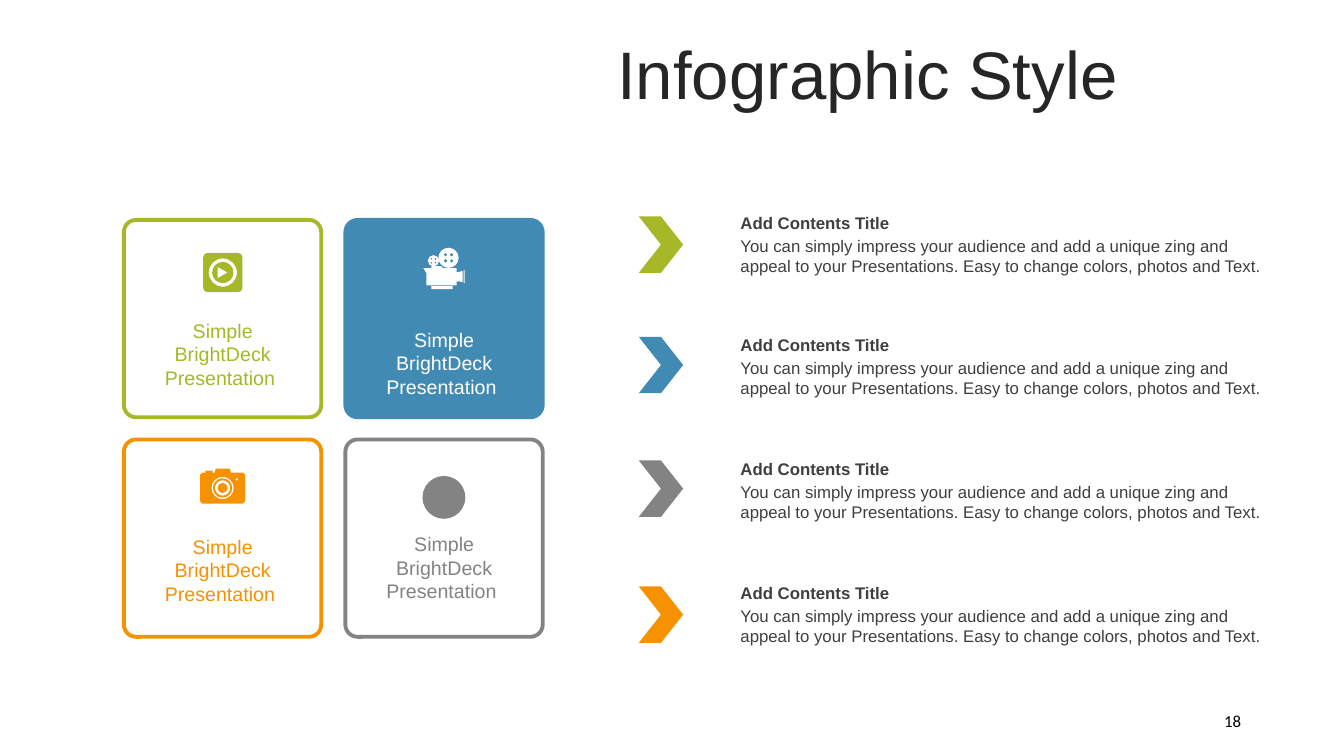
import itertools
import lxml.etree
import pptx
import pptx.dml.color
import pptx.enum.shapes
import pptx.enum.text
import pptx.oxml.ns
import pptx.util

Pt = pptx.util.Pt
KIND = pptx.enum.shapes.MSO_SHAPE
ALIGN = pptx.enum.text.PP_ALIGN
ANCHOR = pptx.enum.text.MSO_ANCHOR
FIT = pptx.enum.text.MSO_AUTO_SIZE

GREEN, BLUE, ORANGE, GRAY = "A6B727", "418AB3", "F69200", "838383"
WHITE, DARK = "FFFFFF", "3F3F3F"


def hue(code):
    return pptx.dml.color.RGBColor.from_string(code)


def ring(left, top, size, radius):
    near, far, pull = radius, size - radius, radius * 0.55
    corners = [(far, far, 1, 0), (near, far, 0, 1), (near, near, -1, 0), (far, near, 0, -1)]
    points = []
    for x, y, dx, dy in corners:
        x, y = left + x, top + y
        if not points or near < far:
            points.append((x + dx * radius, y + dy * radius, False))
        points += [(x + dx * radius - dy * pull, y + dy * radius + dx * pull, True),
                   (x + dx * pull - dy * radius, y + dy * pull + dx * radius, True),
                   (x - dy * radius, y + dx * radius, True)]
    return points


deck = pptx.Presentation()
deck.slide_width, deck.slide_height = Pt(960), Pt(540)
slide = deck.slides.add_slide(deck.slide_layouts[5])
texts = []

title = slide.shapes.title
title.left, title.top, title.width, title.height = Pt(302.6), Pt(27), Pt(634.3), Pt(56.9)
texts.append((title, "Infographic Style",
              {"vertical_anchor": ANCHOR.MIDDLE, "auto_size": FIT.NONE},
              {"alignment": ALIGN.CENTER, "line_spacing": 0.9},
              {"size": Pt(48), "name": "Arial"}, "262626"))

cards = [
    (0, 0, WHITE, GREEN, GREEN, 223.9),
    (1, 0, BLUE, BLUE, WHITE, 230.4),
    (0, 1, WHITE, ORANGE, ORANGE, 378.2),
    (1, 1, WHITE, GRAY, GRAY, 376.6),
]
rows = [
    (GREEN, 154.6, 148.3),
    (BLUE, 240.6, 235.4),
    (GRAY, 328.9, 324),
    (ORANGE, 418.9, 412.6),
]

forms = [(KIND.ROUNDED_RECTANGLE, 88.5 + 158.2 * col, 157.1 + 156.8 * row, 141, 141, 0.062, fill, edge)
         for col, row, fill, edge, ink, top in cards]
forms += [(KIND.CHEVRON, 456.3, top, 31.7, 40.3, 0.5, fill, None) for fill, top, head in rows]
forms.append((KIND.OVAL, 301.8, 340, 30.6, 30.6, None, GRAY, None))
for kind, left, top, width, height, bend, fill, edge in forms:
    shape = slide.shapes.add_shape(kind, Pt(left), Pt(top), Pt(width), Pt(height))
    shape.shadow.inherit = False
    shape.fill.solid()
    shape.fill.fore_color.rgb = hue(fill)
    if bend:
        shape.adjustments[0] = bend
    if edge:
        shape.line.color.rgb = hue(edge)
        shape.line.width = Pt(2.75)
    else:
        shape.line.fill.background()

play = [
    ring(145.2, 180.7, 28, 3),
    ring(149.1, 184.6, 20.2, 10.1),
    ring(151.6, 187.1, 15.2, 7.6),
    [(155.5, 190.7), (155.5, 198.7), (162.7, 194.7)],
]
lens = [ring(159 - size, 348.6 - size, size * 2, size) for size in (8, 6.9, 5.5, 3.6)]
photo = [
    [(143, 339), (144.4, 337.7), (146.7, 337.7), (146.7, 336.2), (151.9, 336.2),
     (151.9, 337.7), (153.4, 337.7), (154.1, 334.8), (164.2, 334.8), (164.9, 337.7),
     (173.5, 337.7), (175, 339), (175, 358.2), (173.5, 359.7), (144.4, 359.7), (143, 358.2)],
    ring(168.1, 341.3, 2.2, 1.1),
] + lens
film = [
    [(302.4, 191.5), (308.2, 191.5), (308.2, 190.2), (315, 190.2), (316.5, 191.5),
     (326.2, 191.5), (326.2, 194.4), (327.6, 194.4), (330.5, 193.5), (330.5, 201.5),
     (327.6, 201), (326.2, 201), (326.2, 203.8), (304.6, 203.8), (304.6, 195.1)],
    [(331.2, 193.2), (331.9, 193), (331.9, 202.3), (331.2, 202)],
    [(308.2, 204.5), (323.3, 204.5), (323.3, 206.6), (308.2, 206.6)],
]
for x, y, size, gap, dot in [(320.4, 184.2, 7.2, 2.2, 1.4), (309.6, 186.3, 4, 1.4, 0.8)]:
    film.append(ring(x - size, y - size, size * 2, size))
    for dx, dy in itertools.product((-gap, gap), repeat=2):
        film.append(ring(x + dx - dot, y + dy - dot, dot * 2, dot))

qn = pptx.oxml.ns.qn
for loops, fill in [(play, GREEN), (film, WHITE), (photo, ORANGE)]:
    paths = [[(point[0] * 100, point[1] * 100) for point in loop] for loop in loops]
    pen = slide.shapes.build_freeform(*paths[0][0], scale=Pt(1) / 100)
    pen.add_line_segments(paths[0][1:])
    for path in paths[1:]:
        pen.move_to(*path[0])
        pen.add_line_segments(path[1:])
    icon = pen.convert_to_shape()
    icon.shadow.inherit = False
    icon.fill.solid()
    icon.fill.fore_color.rgb = hue(fill)
    icon.line.fill.background()
    outline = next(icon._element.iter(qn("a:path")))
    nodes = [node for node in outline if node.tag != qn("a:close")]
    points = itertools.chain.from_iterable(loops)
    bends = [node for node, point in zip(nodes, points) if point[2:] == (True,)]
    for start in range(0, len(bends), 3):
        curve = lxml.etree.Element(qn("a:cubicBezTo"))
        bends[start].addprevious(curve)
        for node in bends[start:start + 3]:
            curve.append(node[0])
            outline.remove(node)

small = {"size": Pt(12), "name": "Arial"}
for fill, top, head in rows:
    group = slide.shapes.add_group_shape()
    body = group.shapes.add_textbox(Pt(521.8), Pt(head + 16.4), Pt(388.1), Pt(36))
    texts.append((body, "You can simply impress your audience and add a unique zing and appeal to your "
                  "Presentations. Easy to change colors, photos and Text.", {}, {}, small, DARK))
    label = group.shapes.add_textbox(Pt(521.8), Pt(head), Pt(388.1), Pt(21.6))
    texts.append((label, "Add Contents Title", {}, {}, {**small, "bold": True}, DARK))

for col, row, fill, edge, ink, top in cards:
    label = slide.shapes.add_textbox(Pt(105.1 + 158.2 * col), Pt(top), Pt(108), Pt(58.3))
    texts.append((label, "Simple BrightDeck Presentation ", {}, {"alignment": ALIGN.CENTER},
                  {"size": Pt(14), "name": "Arial"}, ink))

number = slide.shapes.add_textbox(Pt(486.2), Pt(500.4), Pt(407.5), Pt(28.8))
texts.append((number, "18", {"vertical_anchor": ANCHOR.MIDDLE}, {"alignment": ALIGN.RIGHT},
              {"size": Pt(12), "name": "Calibri"}, "000000"))

for box, words, frame, para, font, ink in texts:
    area = box.text_frame
    area.text = words
    line = area.paragraphs[0]
    face = line.runs[0].font
    for target, format in [(area, {"word_wrap": True, **frame}), (line, para), (face, font)]:
        for name, value in format.items():
            setattr(target, name, value)
    face.color.rgb = hue(ink)

deck.save("out.pptx")
